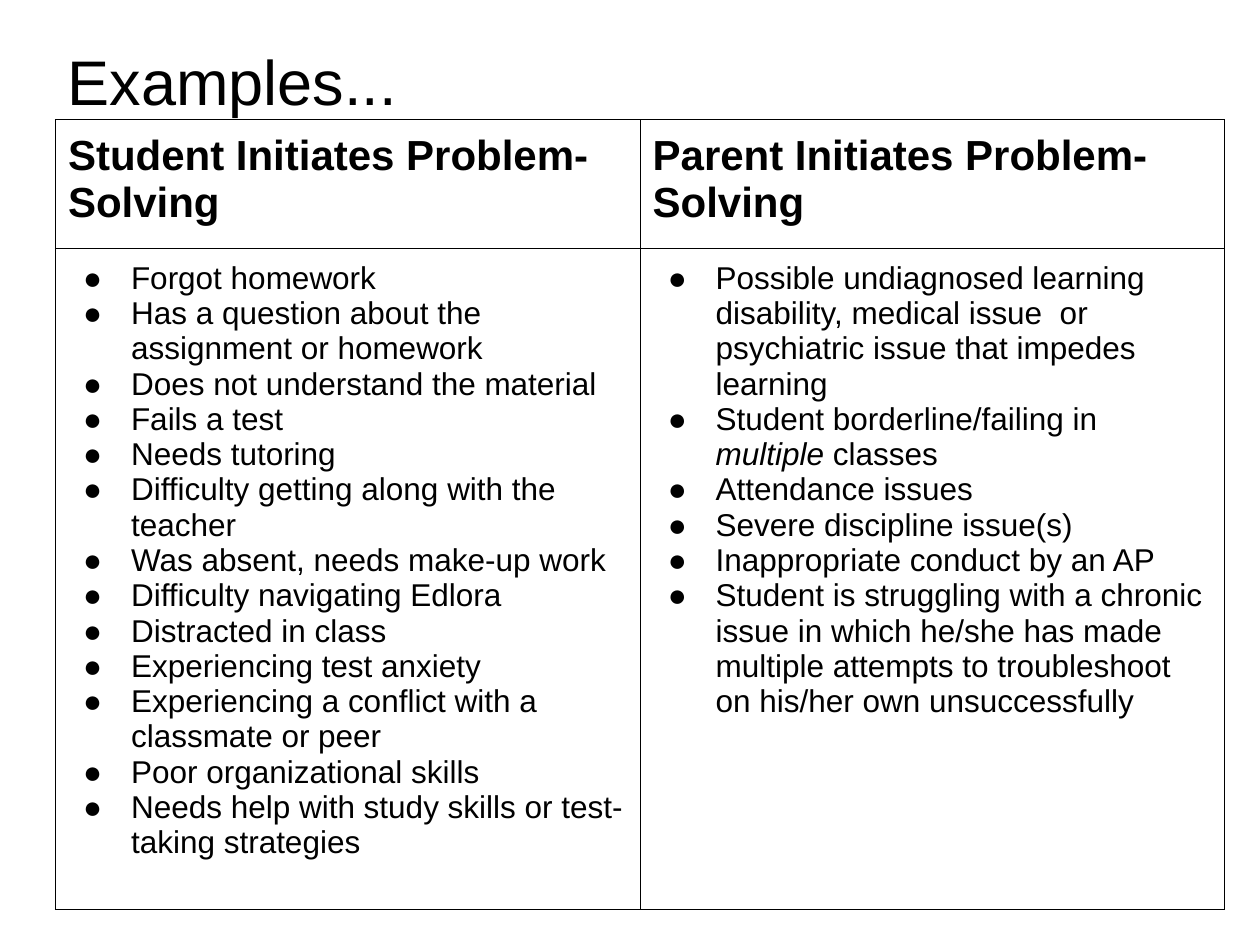
from pptx import Presentation
from pptx import util as u
from pptx.dml.color import RGBColor
from pptx.enum import text
from pptx.oxml.ns import qn
from lxml import etree

INK = "000000"
HEADERS = ["Student Initiates Problem-Solving", "Parent Initiates Problem-Solving"]
STUDENT = [
    "Forgot homework",
    "Has a question about the assignment or homework",
    "Does not understand the material",
    "Fails a test",
    "Needs tutoring",
    "Difficulty getting along with the teacher",
    "Was absent, needs make-up work",
    "Difficulty navigating Edlora",
    "Distracted in class",
    "Experiencing test anxiety",
    "Experiencing a conflict with a classmate or peer",
    "Poor organizational skills",
    "Needs help with study skills or test-taking strategies",
]
PARENT = [
    "Possible undiagnosed learning disability, medical issue  or "
    "psychiatric issue that impedes learning",
    ("Student borderline/failing in ", "multiple ", "classes"),
    "Attendance issues",
    "Severe discipline issue(s)",
    "Inappropriate conduct by an AP",
    "Student is struggling with a chronic issue in which he/she has made "
    "multiple attempts to troubleshoot on his/her own unsuccessfully",
]


def color(value):
    return RGBColor.from_string(value)


def add_run(p, content, size, bold=False, italic=False):
    r = p.add_run()
    r.text = content
    r.font.name = "Arial"
    r.font.size = u.Pt(size)
    r.font.bold = bold
    r.font.italic = italic
    r.font.color.rgb = color(INK)


def add_title(s, content):
    sp = s.shapes.add_textbox(u.Inches(0.44), u.Inches(0.17), u.Inches(5.23), u.Inches(0.61))
    tf = sp.text_frame
    tf.word_wrap = True
    tf.vertical_anchor = text.MSO_ANCHOR.TOP
    tf.margin_left = tf.margin_right = u.Inches(0.1)
    tf.margin_top = u.Inches(0.17)
    tf.margin_bottom = 0
    add_run(tf.paragraphs[0], content, 36)


def set_bullet(p):
    pPr = p._p.get_or_add_pPr()
    pPr.set("marL", str(u.Inches(0.5)))
    pPr.set("indent", str(u.Inches(-0.38)))
    buClr = etree.SubElement(pPr, qn("a:buClr"))
    etree.SubElement(buClr, qn("a:srgbClr"), val=INK)
    etree.SubElement(pPr, qn("a:buFont"), typeface="Arial")
    etree.SubElement(pPr, qn("a:buChar"), char="●")


def format_cell(cell):
    cell.margin_left = cell.margin_right = u.Inches(0.1)
    cell.margin_top = cell.margin_bottom = u.Inches(0.1)
    tcPr = cell._tc.get_or_add_tcPr()
    for side in ("lnL", "lnR", "lnT", "lnB"):
        ln = etree.SubElement(tcPr, qn(f"a:{side}"), w=str(u.Pt(0.75)))
        fill = etree.SubElement(ln, qn("a:solidFill"))
        etree.SubElement(fill, qn("a:srgbClr"), val=INK)
    cell.fill.background()


def fill_list(cell, items):
    tf = cell.text_frame
    for i, item in enumerate(items):
        p = tf.add_paragraph() if i else tf.paragraphs[0]
        set_bullet(p)
        parts = (item,) if isinstance(item, str) else item
        for j, part in enumerate(parts):
            add_run(p, part, 18, italic=j == 1)


def add_examples_table(s):
    table = s.shapes.add_table(
        2, 2, u.Inches(0.44), u.Inches(0.95), u.Inches(9.28), u.Inches(6.27)
    ).table
    table.first_row = table.horz_banding = False
    for row, height in zip(table.rows, (1.02, 5.25)):
        row.height = u.Inches(height)
    for col, (header, items) in enumerate(zip(HEADERS, (STUDENT, PARENT))):
        table.columns[col].width = u.Inches(4.64)
        head, body = table.cell(0, col), table.cell(1, col)
        format_cell(head)
        format_cell(body)
        add_run(head.text_frame.paragraphs[0], header, 24, bold=True)
        fill_list(body, items)


def main():
    prs = Presentation()
    prs.slide_width, prs.slide_height = u.Inches(10), u.Inches(7.5)
    s = prs.slides.add_slide(prs.slide_layouts[6])
    s.background.fill.solid()
    s.background.fill.fore_color.rgb = color("FFFFFF")
    add_examples_table(s)
    add_title(s, "Examples...")
    prs.save("out.pptx")


if __name__ == "__main__":
    main()
